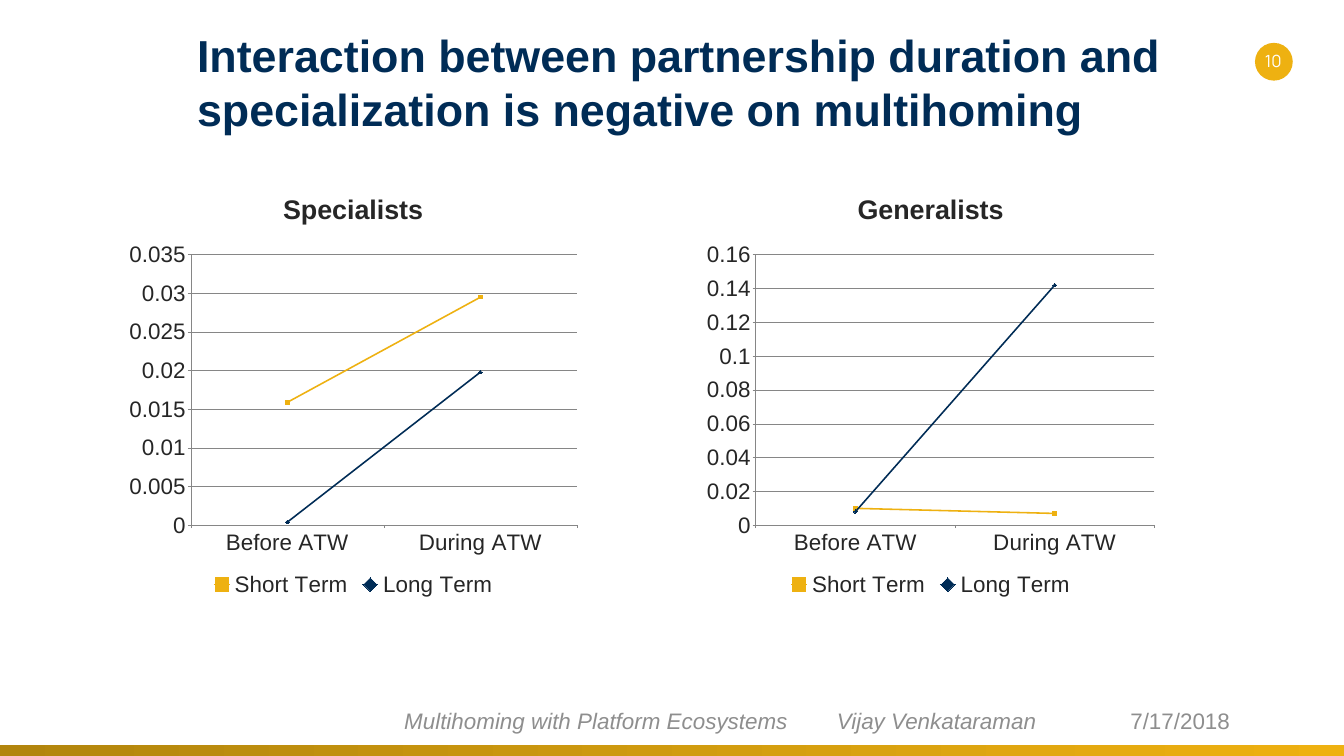
from lxml import etree
from pptx import Presentation
from pptx.chart.data import CategoryChartData
from pptx.dml.color import RGBColor
from pptx.enum.chart import (XL_CHART_TYPE, XL_LEGEND_POSITION, XL_MARKER_STYLE,
                             XL_TICK_LABEL_POSITION, XL_TICK_MARK)
from pptx.enum.shapes import MSO_SHAPE
from pptx.enum.text import MSO_ANCHOR, PP_ALIGN
from pptx.oxml.ns import qn
from pptx.util import Pt

LINE_MARKERS = XL_CHART_TYPE.LINE_MARKERS
LEGEND_BOTTOM = XL_LEGEND_POSITION.BOTTOM
LABELS_LOW = XL_TICK_LABEL_POSITION.LOW
TICK_OUT, TICK_NONE = XL_TICK_MARK.OUTSIDE, XL_TICK_MARK.NONE
SQUARE, DIAMOND = XL_MARKER_STYLE.SQUARE, XL_MARKER_STYLE.DIAMOND
OVAL, RECTANGLE = MSO_SHAPE.OVAL, MSO_SHAPE.RECTANGLE
TOP, MIDDLE = MSO_ANCHOR.TOP, MSO_ANCHOR.MIDDLE
LEFT, CENTER = PP_ALIGN.LEFT, PP_ALIGN.CENTER

GOLD = RGBColor(0xEE, 0xB1, 0x11)
DARK_GOLD = RGBColor(0xB2, 0x85, 0x0D)
NAVY = RGBColor(0x00, 0x2C, 0x56)
WHITE = RGBColor(0xFF, 0xFF, 0xFF)
FOOTER_GRAY = RGBColor(0x8E, 0x8E, 0x8E)
AXIS_GRAY = RGBColor(0x86, 0x86, 0x86)
INK = RGBColor(0x26, 0x26, 0x26)

SLIDE_W, SLIDE_H = 1920, 1080
BAR_TOP = 1064.5
INSET_X, INSET_Y = 19.2, 9.6
AUTHOR_TAB = 618

HEADLINE = ("Interaction between partnership duration and "
            "specialization is negative on multihoming")
FOOTER = "Multihoming with Platform Ecosystems\tVijay Venkataraman"
FOOTER_FONT = {"name": "Arial", "size": Pt(32)}
TEXTS = [
    {"text": "10", "box": (1777, 68.4, 84, 57.6), "insets": (7.2, 3.6),
     "align": CENTER, "anchor": TOP, "color": WHITE,
     "font": {"name": "Manrope", "size": Pt(24)}},
    {"text": HEADLINE, "box": (166.3, 30, 1530, 170), "insets": (INSET_X + 96, INSET_Y),
     "align": LEFT, "anchor": TOP, "color": NAVY,
     "font": {"name": "Arial", "size": Pt(64), "bold": True}},
    {"text": FOOTER, "box": (504, 998, 1051, 63), "insets": (73.4, INSET_Y),
     "align": LEFT, "anchor": MIDDLE, "color": FOOTER_GRAY, "tab": AUTHOR_TAB,
     "font": {**FOOTER_FONT, "italic": True}},
    {"text": "7/17/2018", "box": (1595.5, 1001, 229, 57.6), "insets": (INSET_X, INSET_Y),
     "align": LEFT, "anchor": MIDDLE, "color": FOOTER_GRAY, "font": FOOTER_FONT},
]

PERIODS = ["Before ATW", "During ATW"]
TERMS = [("Short Term", GOLD, SQUARE), ("Long Term", NAVY, DIAMOND)]
PARTNERS = [
    ("Specialists", [(0.0159, 0.0295), (0.0004, 0.0198)]),
    ("Generalists", [(0.01, 0.007), (0.008, 0.142)]),
]
CHART_LEFT, CHART_TOP, CHART_W, CHART_H = 171.4, 252, 666, 607.7
CHART_STEP = 825


def style_font(font, color, values):
    for key, value in values.items():
        setattr(font, key, value)
    font.color.rgb = color


def add_plain(slide, kind, box):
    shape = slide.shapes.add_shape(kind, *map(Pt, box))
    shape.shadow.inherit = False
    shape.line.fill.background()
    return shape


def add_text(slide, item):
    frame = slide.shapes.add_textbox(*map(Pt, item["box"])).text_frame
    inset_x, inset_y = map(Pt, item["insets"])
    settings = {"word_wrap": True, "vertical_anchor": item["anchor"],
                "margin_left": inset_x, "margin_right": min(inset_x, Pt(INSET_X)),
                "margin_top": inset_y, "margin_bottom": inset_y}
    for key, value in settings.items():
        setattr(frame, key, value)
    paragraph = frame.paragraphs[0]
    paragraph.alignment = item["align"]
    if "tab" in item:
        tabs = etree.SubElement(paragraph._p.get_or_add_pPr(), qn("a:tabLst"))
        etree.SubElement(tabs, qn("a:tab"), pos=str(Pt(item["tab"])), algn="l")
    run = paragraph.add_run()
    run.text = item["text"]
    style_font(run.font, item["color"], item["font"])


def style_line(line, color, width):
    line.color.rgb = color
    line.width = Pt(width)


def add_line_chart(slide, left, title, rows):
    data = CategoryChartData(number_format="General")
    data.categories = PERIODS
    for (term, _, _), values in zip(TERMS, rows):
        data.add_series(term, values)
    chart = slide.shapes.add_chart(LINE_MARKERS, Pt(left), Pt(CHART_TOP),
                                   Pt(CHART_W), Pt(CHART_H), data).chart
    style_font(chart.font, INK, {"name": "Arial", "size": Pt(32)})
    chart.has_title = True
    heading = chart.chart_title.text_frame.paragraphs[0].add_run()
    heading.text = title
    style_font(heading.font, INK, {"name": "Arial", "size": Pt(38.4), "bold": True})
    chart.has_legend = True
    chart.legend.position = LEGEND_BOTTOM
    chart.legend.include_in_layout = False

    for axis in (chart.category_axis, chart.value_axis):
        axis.major_tick_mark = TICK_OUT
        axis.minor_tick_mark = TICK_NONE
        style_line(axis.format.line, AXIS_GRAY, 0.75)
    chart.category_axis.tick_label_position = LABELS_LOW
    chart.value_axis.has_major_gridlines = True
    style_line(chart.value_axis.major_gridlines.format.line, AXIS_GRAY, 0.75)

    plot = chart.plots[0]
    plot.vary_by_categories = False
    for series, (_, color, marker) in zip(plot.series, TERMS):
        series.smooth = False
        style_line(series.format.line, color, 2.25)
        series.marker.style = marker
        series.marker.size = 5
        series.marker.format.fill.solid()
        series.marker.format.fill.fore_color.rgb = color
        series.marker.format.line.color.rgb = color


def main():
    deck = Presentation()
    deck.slide_width, deck.slide_height = Pt(SLIDE_W), Pt(SLIDE_H)
    slide = deck.slides.add_slide(deck.slide_layouts[6])

    badge = add_plain(slide, OVAL, (1792.8, 61.2, 54, 54))
    badge.fill.solid()
    badge.fill.fore_color.rgb = GOLD
    bar = add_plain(slide, RECTANGLE, (0, BAR_TOP, SLIDE_W, SLIDE_H - BAR_TOP))
    bar.fill.gradient()
    bar.fill.gradient_angle = 0
    for stop, color in zip(bar.fill.gradient_stops, (DARK_GOLD, GOLD)):
        stop.color.rgb = color

    for item in TEXTS:
        add_text(slide, item)
    for index, (title, rows) in enumerate(PARTNERS):
        add_line_chart(slide, CHART_LEFT + index * CHART_STEP, title, rows)
    deck.save("out.pptx")


if __name__ == "__main__":
    main()
